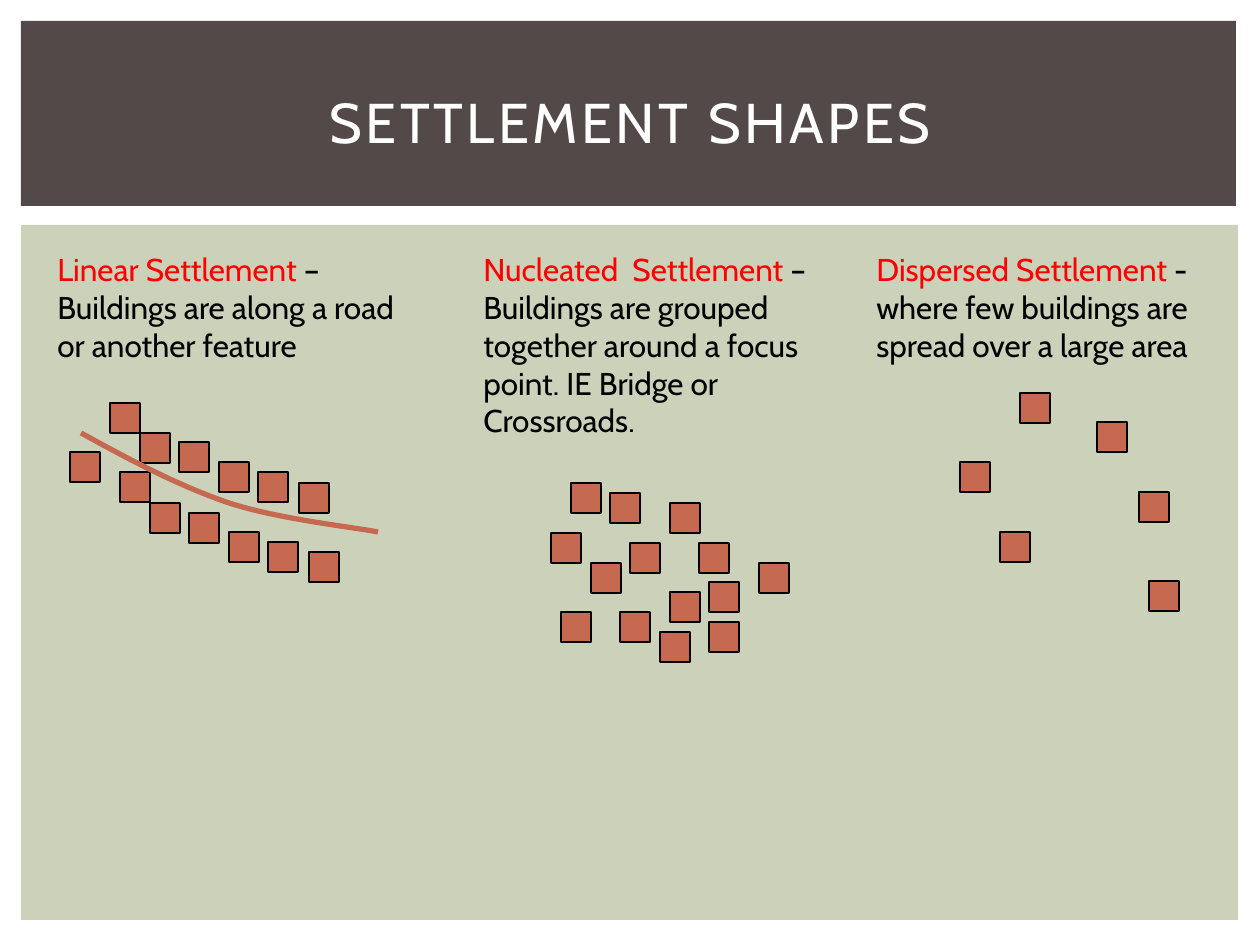
"""Build a slide comparing linear, nucleated and dispersed settlement shapes."""
from pptx import Presentation
from pptx import util as u
from pptx.dml.color import RGBColor
from pptx.enum import shapes, text
from pptx.oxml.ns import qn

PX = 914400 / 126
COLORS = {"panel": "CCD1B9", "banner": "534949", "building": "C66951",
          "outline": "000000", "body": "000000", "term": "FF0000", "title": "FFFFFF"}


def add_rect(left, top, width, height, fill, line=None):
    rect = page.shapes.add_shape(shapes.MSO_SHAPE.RECTANGLE,
                                 *(round(n * PX) for n in (left, top, width, height)))
    rect.shadow.inherit = False
    rect.fill.solid()
    rect.fill.fore_color.rgb = RGBColor.from_string(COLORS[fill])
    if line:
        rect.line.color.rgb = RGBColor.from_string(COLORS[line])
        rect.line.width = u.Pt(0.75)
    else:
        rect.line.fill.background()


def add_text(spans, *, at, size, align="LEFT", anchor="TOP", spacing=0):
    box = page.shapes.add_textbox(*(round(n * PX) for n in at))
    frame = box.text_frame
    frame.word_wrap = True
    frame.vertical_anchor = text.MSO_ANCHOR[anchor]
    para = frame.paragraphs[0]
    para.alignment = text.PP_ALIGN[align]
    for words, color in spans:
        span = para.add_run()
        span.text = words
        span.font.name = "Cabin"
        span.font.size = u.Pt(size)
        span.font.color.rgb = RGBColor.from_string(COLORS[color])
        if spacing:
            span.font._element.set("spc", str(spacing * 100))


deck = Presentation()
deck.slide_width, deck.slide_height = u.Inches(10), u.Inches(7.5)
page = deck.slides.add_slide(deck.slide_layouts[6])

add_rect(21, 225, 1217, 695, "panel")
add_rect(21, 21, 1215, 185, "banner")
add_text([("SETTLEMENT SHAPES", "title")], at=(53, 49, 1155, 145), size=32,
         align="CENTER", anchor="MIDDLE", spacing=2)

settlements = [
    {"term": "Linear Settlement ",
     "meaning": "– Buildings are along a road or another feature",
     "at": (45, 244, 377, 127),
     "buildings": [(110, 403), (140, 433), (179, 442), (219, 462), (258, 472),
                   (299, 483), (120, 472), (150, 503), (189, 513), (229, 532),
                   (268, 542), (309, 552), (70, 452)]},
    {"term": "Nucleated  Settlement ",
     "meaning": "– Buildings are grouped together around a focus point. "
                "IE Bridge or Crossroads.",
     "at": (471, 244, 377, 204),
     "buildings": [(571, 483), (610, 493), (630, 543), (699, 543), (591, 563),
                   (620, 612), (670, 592), (759, 563), (709, 582), (660, 632),
                   (709, 622), (670, 503), (551, 533), (561, 612)]},
    {"term": "Dispersed Settlement ",
     "meaning": "- where few buildings are spread over a large area",
     "at": (864, 244, 354, 127),
     "buildings": [(1020, 393), (1097, 422), (1000, 532), (1149, 581),
                   (1139, 492), (960, 462)]},
]
for settlement in settlements:
    for left, top in settlement["buildings"]:
        add_rect(left, top, 30, 30, "building", line="outline")
    add_text([(settlement["term"], "term"), (settlement["meaning"], "body")],
             at=settlement["at"], size=18)

road_points = [(81, 433), (130, 460), (179, 486), (229, 503),
               (278, 519), (352, 527), (378, 532)]
builder = page.shapes.build_freeform(*road_points[0], scale=PX)
builder.add_line_segments(road_points[1:], close=False)
road = builder.convert_to_shape()
road.shadow.inherit = False
road.fill.background()
road.line.color.rgb = RGBColor.from_string(COLORS["building"])
road.line.width = u.Pt(3)

outline = next(road._element.iter(qn("a:path")))
segments = outline.findall(qn("a:lnTo"))
for start in range(0, len(segments), 3):
    curve = outline.makeelement(qn("a:cubicBezTo"), {})
    outline.append(curve)
    for segment in segments[start:start + 3]:
        curve.append(segment[0])
        outline.remove(segment)

deck.save("out.pptx")
